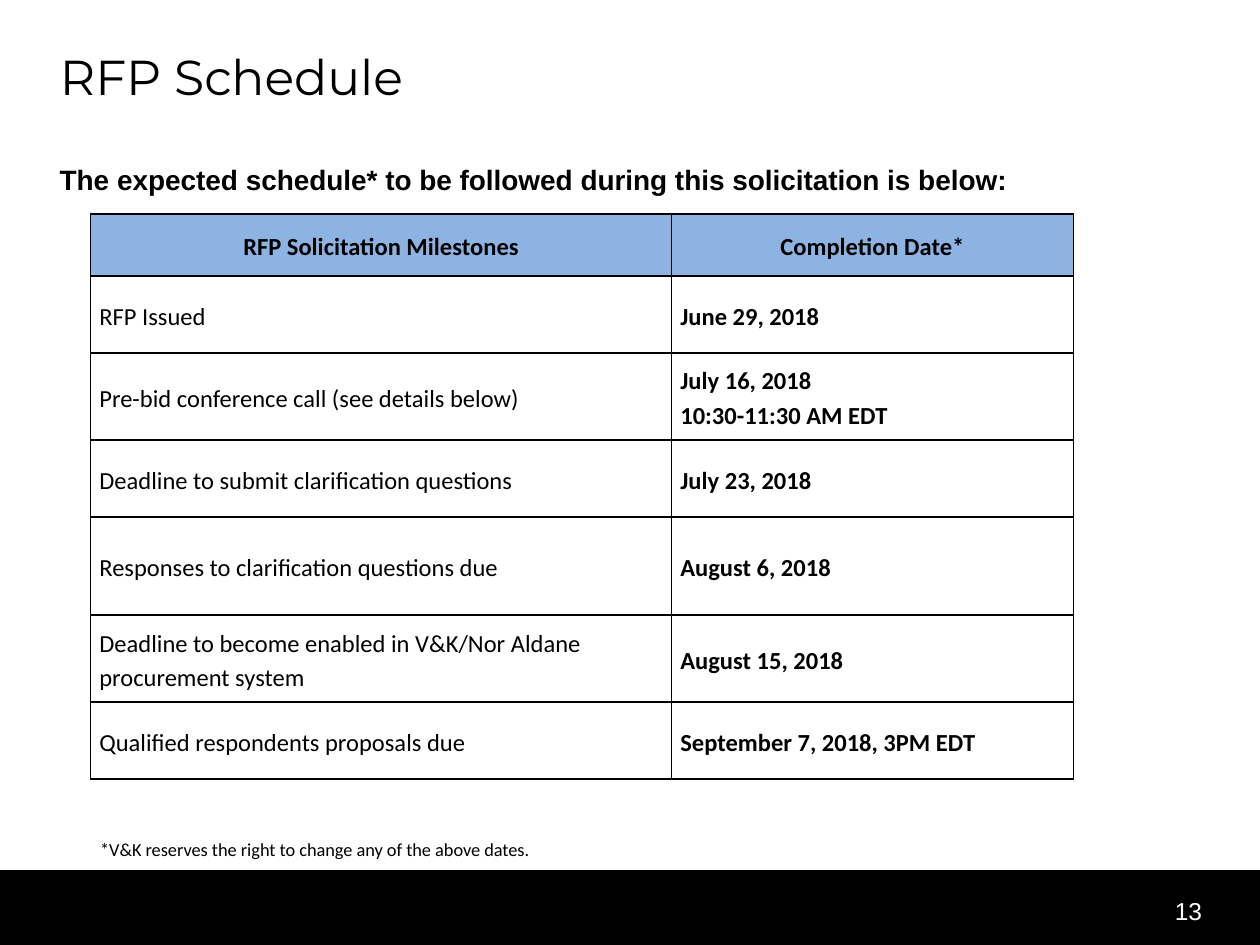
from lxml.etree import SubElement
from pptx import Presentation
from pptx.dml.color import RGBColor
from pptx.enum.shapes import MSO_SHAPE
from pptx.enum.text import MSO_ANCHOR, PP_ALIGN
from pptx.oxml.ns import qn
from pptx.util import Pt

BLACK, WHITE, HEADER_BLUE = "000000", "FFFFFF", "8DB3E2"
COLUMN_WIDTHS = [332, 229.6]
ROW_HEIGHTS = [35.3, 44, 49.7, 44, 56.2, 49.7, 44]
SCHEDULE = [
    ("RFP Solicitation Milestones", "Completion Date*"),
    ("RFP Issued", "June 29, 2018"),
    ("Pre-bid conference call (see details below)", "July 16, 2018\n10:30-11:30 AM EDT"),
    ("Deadline to submit clarification questions", "July 23, 2018"),
    ("Responses to clarification questions due", "August 6, 2018"),
    ("Deadline to become enabled in V&K/Nor Aldane procurement system", "August 15, 2018"),
    ("Qualified respondents proposals due", "September 7, 2018, 3PM EDT"),
]


def color(value):
    return RGBColor.from_string(value)


def write(frame, text, size, font, ink=BLACK, bold=False,
          align=PP_ALIGN.LEFT, spacing=1.0, anchor=MSO_ANCHOR.TOP):
    frame.word_wrap = True
    frame.vertical_anchor = anchor
    for index, line in enumerate(text.split("\n")):
        para = frame.add_paragraph() if index else frame.paragraphs[0]
        para.alignment = align
        para.line_spacing = spacing
        span = para.add_run()
        span.text = line
        span.font.size = Pt(size)
        span.font.name = font
        span.font.bold = bold
        span.font.color.rgb = color(ink)


def add_text(page, box, text, size, font, **style):
    shape = page.shapes.add_textbox(*map(Pt, box))
    write(shape.text_frame, text, size, font, **style)


def add_title(page, box, text):
    title = page.shapes.title
    title.left, title.top, title.width, title.height = map(Pt, box)
    write(title.text_frame, text, 28, "Montserrat", spacing=0.9)


def add_footer(page, box, number):
    left, top, width, height = box
    bar = page.shapes.add_shape(MSO_SHAPE.RECTANGLE, *map(Pt, box))
    bar.shadow.inherit = False
    bar.fill.solid()
    bar.fill.fore_color.rgb = color(BLACK)
    bar.line.color.rgb = color(BLACK)
    bar.line.width = Pt(0.75)
    add_text(page, (left + width - 70.6, top + 10.8, 44.6, 28.8), number, 14, "Arial",
             ink=WHITE, align=PP_ALIGN.RIGHT)


def add_borders(cell, ink, width):
    properties = cell._tc.get_or_add_tcPr()
    for position, side in enumerate(("lnL", "lnR", "lnT", "lnB")):
        line = SubElement(properties, qn(f"a:{side}"), w=str(Pt(width)))
        fill = SubElement(line, qn("a:solidFill"))
        SubElement(fill, qn("a:srgbClr"), val=ink)
        properties.remove(line)
        properties.insert(position, line)


def add_schedule(page, left, top):
    frame = page.shapes.add_table(len(SCHEDULE), len(COLUMN_WIDTHS), Pt(left), Pt(top),
                                  Pt(sum(COLUMN_WIDTHS)), Pt(sum(ROW_HEIGHTS)))
    table = frame.table
    table.horz_banding = False
    for column, width in zip(table.columns, COLUMN_WIDTHS):
        column.width = Pt(width)
    for row, height in zip(table.rows, ROW_HEIGHTS):
        row.height = Pt(height)
    for row_index, texts in enumerate(SCHEDULE):
        header = row_index == 0
        for column_index, text in enumerate(texts):
            cell = table.cell(row_index, column_index)
            cell.margin_left = cell.margin_right = Pt(5)
            cell.margin_top = cell.margin_bottom = Pt(0)
            cell.vertical_anchor = MSO_ANCHOR.MIDDLE
            cell.fill.solid()
            cell.fill.fore_color.rgb = color(HEADER_BLUE if header else WHITE)
            add_borders(cell, BLACK, 1)
            write(cell.text_frame, text, 14, "Calibri", bold=header or column_index == 1,
                  align=PP_ALIGN.CENTER if header else PP_ALIGN.LEFT,
                  spacing=1.15, anchor=None)


def main():
    deck = Presentation()
    deck.slide_width, deck.slide_height = Pt(720), Pt(540)
    page = deck.slides.add_slide(deck.slide_layouts[5])
    add_footer(page, (0, 497.5, 720, 42.5), "13")
    add_title(page, (27, 27, 666, 85), "RFP Schedule")
    add_text(page, (27, 89.5, 666, 379),
             "The expected schedule* to be followed during this solicitation is below:",
             16, "Arial", bold=True)
    add_text(page, (0, 475.5, 360, 20),
             "*V&K reserves the right to change any of the above dates.",
             10.5, "Calibri", align=PP_ALIGN.CENTER)
    add_schedule(page, 51.8, 122.4)
    deck.save("out.pptx")


if __name__ == "__main__":
    main()
